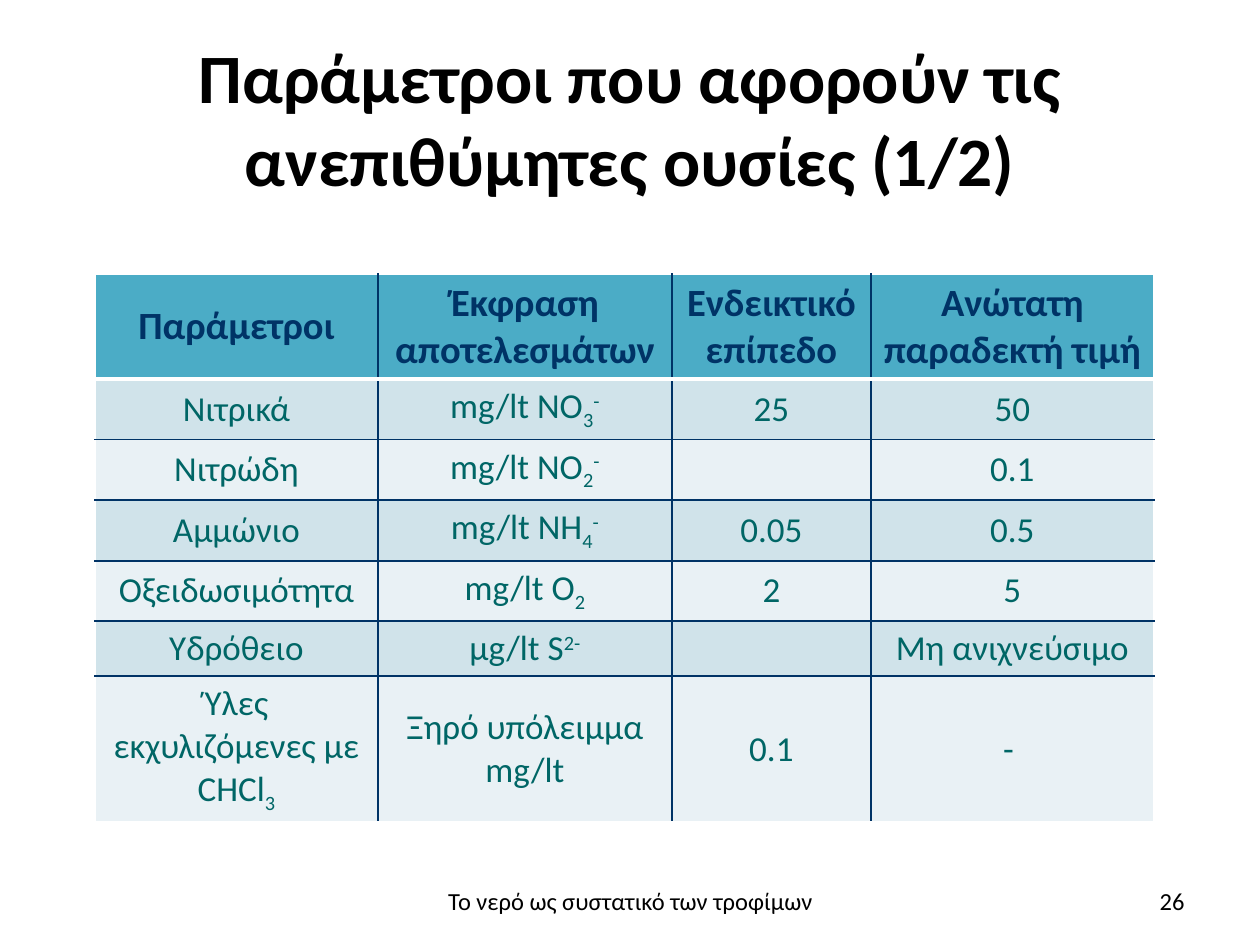
from pptx import Presentation, util as u
from pptx.dml.color import RGBColor
from pptx.enum import text as t
from pptx.oxml import parse_xml
from pptx.oxml.ns import nsdecls

SCALE = 914400 / 126
FONT = "Calibri"
INK = {"text": "000000", "head": "4BACC6", "navy": "003366", "teal": "006666",
       "dark": "D0E3EA", "light": "E9F1F5", "white": "FFFFFF"}
COLS = [283, 294, 199, 283]
ROWS = [105, 60, 60, 61, 60, 55, 146]
# "|" parts the runs; "_" starts a subscript and "^" a superscript.
DATA = [
    ["Παράμετροι", "Έκφραση αποτελεσμάτων", "Ενδεικτικό επίπεδο", "Ανώτατη παραδεκτή τιμή"],
    ["Νιτρικά", "mg/lt ΝΟ|_3|^-", "25", "50"],
    ["Νιτρώδη", "mg/lt ΝΟ|_2|^-", "", "0.1"],
    ["Αμμώνιο", "mg/lt ΝΗ|_4|^-", "0.05", "0.5"],
    ["Οξειδωσιμότητα", "mg/lt Ο|_2", "2", "5"],
    ["Υδρόθειο", "μg/lt S|^2-", "", "Μη ανιχνεύσιμο"],
    ["Ύλες εκχυλιζόμενες με CHCl|_3", "Ξηρό υπόλειμμα mg/lt", "0.1", "- "],
]
BASE = {"_": "-25000", "^": "30000"}


def px(n):
    return u.Emu(round(n * SCALE))


def write(frame, words, size, ink, align=t.PP_ALIGN.CENTER, bold=False):
    """Fill a frame with one paragraph of marked-up words."""
    para = frame.paragraphs[0]
    para.alignment = align
    font = para.font
    font.name, font.size, font.bold = FONT, u.Pt(size), bold
    font.color.rgb = RGBColor.from_string(INK[ink])
    for part in filter(None, words.split("|")):
        run = para.add_run()
        base = BASE.get(part[0])
        run.text = part[1:] if base else part
        if base:
            run.font._element.set("baseline", base)


def label(slide, box, words, size, **style):
    frame = slide.shapes.add_textbox(*map(px, box)).text_frame
    frame.word_wrap = True
    frame.vertical_anchor = t.MSO_ANCHOR.MIDDLE
    write(frame, words, size, "text", **style)


def edge(cell, side, ink, width):
    props = cell._tc.get_or_add_tcPr()
    line = parse_xml(
        f'<a:ln{side} {nsdecls("a")} w="{u.Pt(width)}"><a:solidFill>'
        f'<a:srgbClr val="{INK[ink]}"/></a:solidFill></a:ln{side}>')
    props.insert(len(props.findall("*")) - 1, line)  # borders go before the fill


def frame_cell(cell, row, col):
    """Navy lines inside, white ones outside and under the header."""
    last, end = len(ROWS) - 1, len(COLS) - 1
    edge(cell, "L", "navy" if col else "white", 1)
    edge(cell, "R", "navy" if col < end else "white", 1)
    edge(cell, "T", "navy" if row > 1 else "white", 3 if row == 1 else 1)
    edge(cell, "B", "navy" if 0 < row < last else "white", 1 if row else 3)


def grid(slide, box):
    table = slide.shapes.add_table(len(ROWS), len(COLS), *map(px, box)).table
    for col, width in zip(table.columns, COLS):
        col.width = px(width)
    for r, (line, height) in enumerate(zip(DATA, ROWS)):
        table.rows[r].height = px(height)
        back = "head" if r == 0 else "dark" if r % 2 else "light"
        for c, words in enumerate(line):
            cell = table.cell(r, c)
            cell.vertical_anchor = t.MSO_ANCHOR.MIDDLE
            cell.fill.solid()
            cell.fill.fore_color.rgb = RGBColor.from_string(INK[back])
            frame_cell(cell, r, c)
            if r == 0:
                write(cell.text_frame, words, 22, "navy", bold=True)
            else:
                write(cell.text_frame, words, 20, "teal")


def footer(slide, box):
    left, top, width, height = box
    label(slide, (left + 368, top, 399, height), "Το νερό ως συστατικό των τροφίμων", 14)
    label(slide, (left + width - 294, top, 294, height), "26", 14, align=t.PP_ALIGN.RIGHT)


def main():
    deck = Presentation()
    deck.slide_width, deck.slide_height = px(1260), px(945)
    slide = deck.slides.add_slide(deck.slide_layouts[6])
    label(slide, (63, 38, 1134, 158), "Παράμετροι που αφορούν τις ανεπιθύμητες ουσίες (1/2)",
          39.6, bold=True)
    grid(slide, (95, 274, sum(COLS), sum(ROWS)))
    footer(slide, (63, 876, 1134, 50))
    deck.save("out.pptx")


if __name__ == "__main__":
    main()
